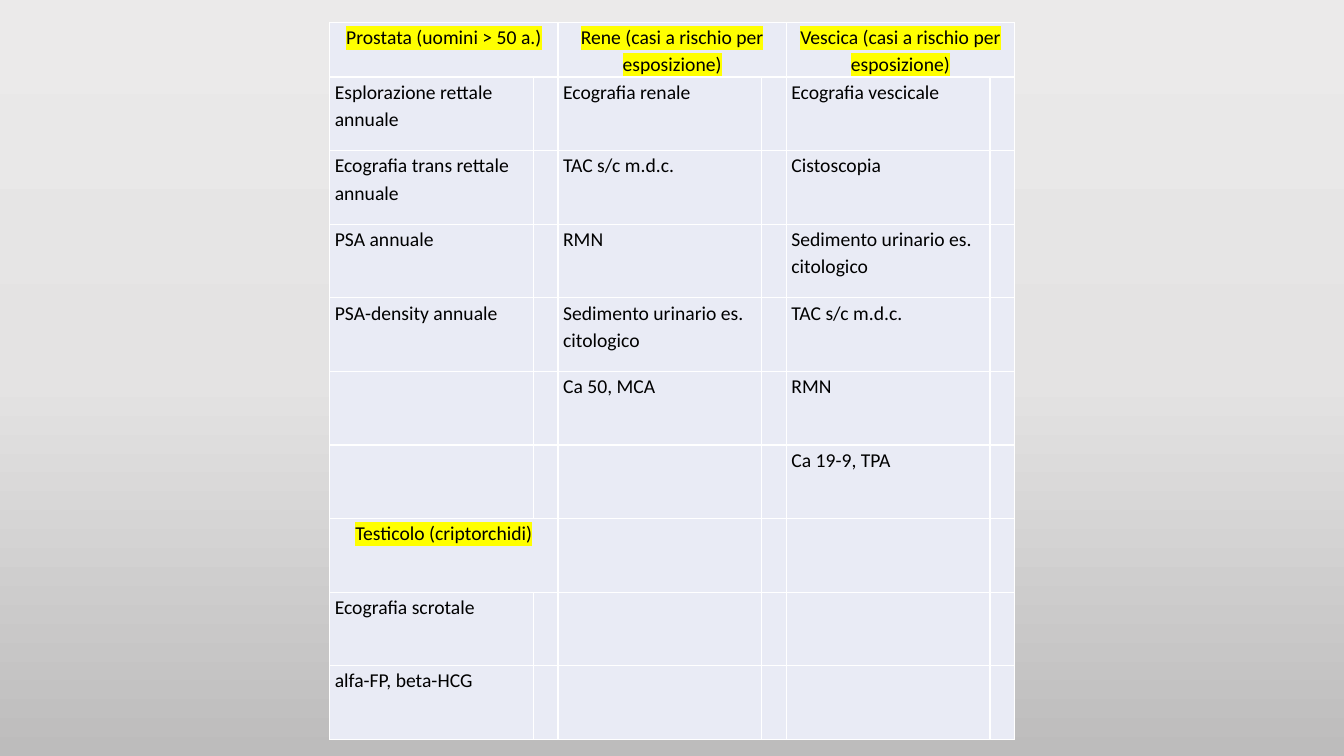
from copy import deepcopy
from dataclasses import dataclass

from lxml.etree import SubElement
from pptx import Presentation
from pptx.dml.color import RGBColor as Rgb
from pptx.enum.text import PP_ALIGN as Align
from pptx.oxml.ns import qn
from pptx.slide import Slide
from pptx.table import Table, _Cell as Cell
from pptx.util import Inches, Pt


@dataclass(frozen=True)
class Theme:
    font: str = "Calibri"
    size: int = 14
    text: str = "000000"
    marker: str = "FFFF00"
    cell: str = "E9EBF5"
    border: str = "FFFFFF"
    border_width: int = 1
    backdrop: tuple[str, ...] = ("EBEAEA", "E4E3E3", "BDBCBC")


@dataclass(frozen=True)
class Organ:
    """A screened organ: its heading and exams, from a given table position."""
    row: int
    column: int
    heading: str
    exams: tuple[str, ...]


THEME = Theme()
EXAM_WIDTH, CHECK_WIDTH = 2.02, 0.245
HEADING_HEIGHT, EXAM_HEIGHT = 0.53, 0.73
ROWS, PAIRS = 10, 3

ORGANS = (
    Organ(0, 0, "Prostata (uomini > 50 a.)", (
        "Esplorazione rettale annuale", "Ecografia trans rettale annuale",
        "PSA annuale", "PSA-density annuale")),
    Organ(0, 2, "Rene (casi a rischio per esposizione)", (
        "Ecografia renale", "TAC s/c m.d.c.", "RMN",
        "Sedimento urinario es. citologico", "Ca 50, MCA")),
    Organ(0, 4, "Vescica (casi a rischio per esposizione)", (
        "Ecografia vescicale", "Cistoscopia",
        "Sedimento urinario es. citologico", "TAC s/c m.d.c.", "RMN",
        "Ca 19-9, TPA")),
    Organ(7, 0, "Testicolo (criptorchidi)", (
        "Ecografia scrotale", "alfa-FP, beta-HCG")),
)


def paint_backdrop(slide: Slide) -> None:
    fill = slide.background.fill
    fill.gradient()
    fill.gradient_angle = 270
    # The default gradient has two stops; add the middle one
    stop_list = next(slide.element.iter(qn("a:gsLst")))
    stop_list.append(deepcopy(stop_list[0]))
    for index, (stop, color) in enumerate(zip(fill.gradient_stops, THEME.backdrop)):
        stop.position = index / (len(THEME.backdrop) - 1)
        stop.color.rgb = Rgb.from_string(color)


def add_color(parent, tag: str, color: str) -> None:
    holder = SubElement(parent, qn(tag))
    SubElement(holder, qn("a:srgbClr"), val=color)


def style_cell(cell: Cell) -> None:
    cell.margin_left = cell.margin_right = Inches(0.05)
    cell.margin_top = cell.margin_bottom = 0
    properties = cell._tc.get_or_add_tcPr()
    for side in ("a:lnL", "a:lnR", "a:lnT", "a:lnB"):
        line = SubElement(properties, qn(side), w=str(Pt(THEME.border_width)))
        add_color(line, "a:solidFill", THEME.border)
    cell.fill.solid()
    cell.fill.fore_color.rgb = Rgb.from_string(THEME.cell)


def write(cell: Cell, wording: str, heading: bool = False) -> None:
    paragraph = cell.text_frame.paragraphs[0]
    paragraph.text = wording
    paragraph.alignment = Align.CENTER if heading else Align.LEFT
    paragraph.line_spacing = 1.15
    paragraph.space_after = Pt(10)
    run = paragraph.runs[0]
    run.font.size = Pt(THEME.size)
    run.font.color.rgb = Rgb.from_string(THEME.text)
    if heading:
        add_color(run.font._element, "a:highlight", THEME.marker)
    run.font.name = THEME.font


def fill_organ(table: Table, organ: Organ) -> None:
    heading = table.cell(organ.row, organ.column)
    heading.merge(table.cell(organ.row, organ.column + 1))
    write(heading, organ.heading, heading=True)
    for row, exam in enumerate(organ.exams, organ.row + 1):
        write(table.cell(row, organ.column), exam)


def add_screening_table(slide: Slide) -> None:
    width = PAIRS * (EXAM_WIDTH + CHECK_WIDTH)
    height = HEADING_HEIGHT + (ROWS - 1) * EXAM_HEIGHT
    table = slide.shapes.add_table(
        ROWS, 2 * PAIRS, Inches(3.27), Inches(0.22),
        Inches(width), Inches(height)).table
    table.first_row = table.horz_banding = False
    for index, column in enumerate(table.columns):
        column.width = Inches(CHECK_WIDTH if index % 2 else EXAM_WIDTH)
    for index, row in enumerate(table.rows):
        row.height = Inches(EXAM_HEIGHT if index else HEADING_HEIGHT)
    for cell in table.iter_cells():
        style_cell(cell)
    for organ in ORGANS:
        fill_organ(table, organ)


def main() -> None:
    deck = Presentation()
    deck.slide_width, deck.slide_height = Inches(13.33), Inches(7.5)
    slide = deck.slides.add_slide(deck.slide_layouts[6])
    paint_backdrop(slide)
    add_screening_table(slide)
    deck.save("out.pptx")


if __name__ == "__main__":
    main()
